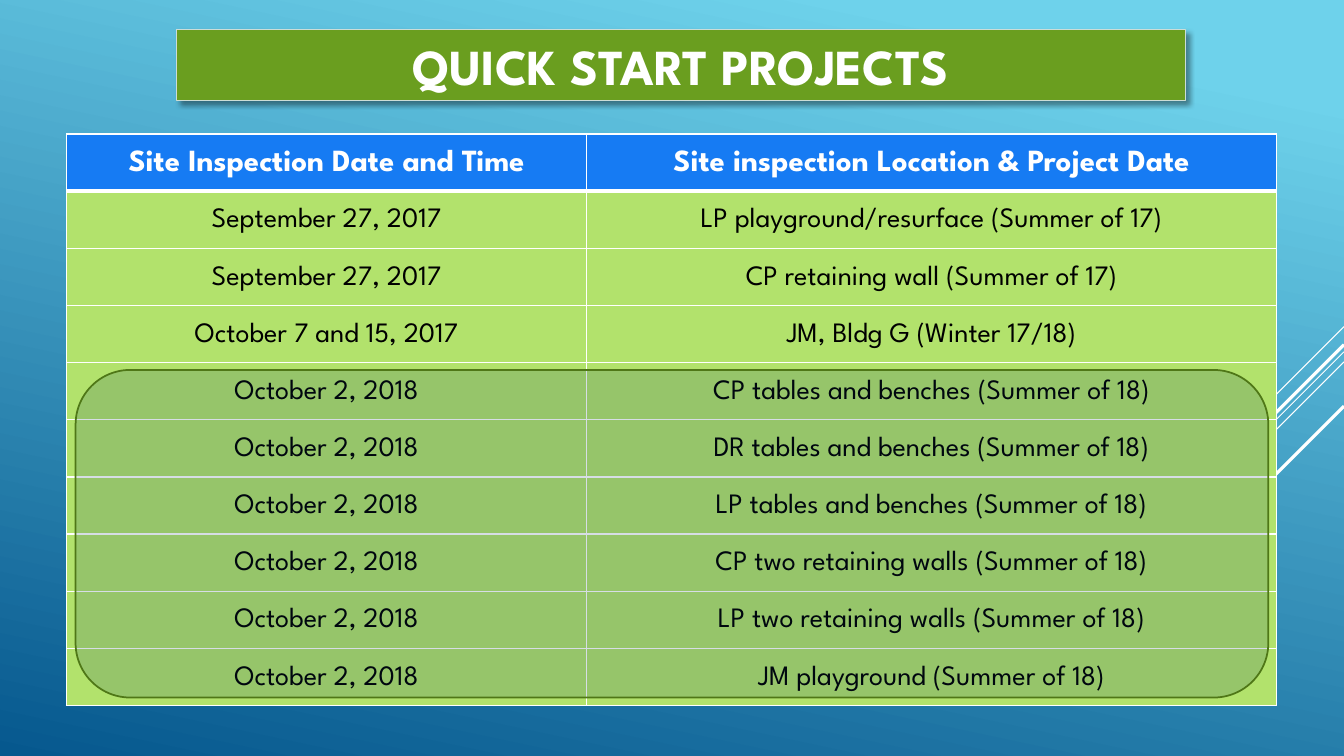
import pptx
import pptx.util
import pptx.oxml
import pptx.oxml.ns
import pptx.dml.color
import pptx.enum.shapes
import pptx.enum.text

Inches = pptx.util.Inches
Pt = pptx.util.Pt
RGBColor = pptx.dml.color.RGBColor
MIDDLE = pptx.enum.text.MSO_ANCHOR.MIDDLE

WHITE = RGBColor(0xFF, 0xFF, 0xFF)
BLACK = RGBColor(0, 0, 0)
SKY = RGBColor(0x6E, 0xD2, 0xEB)
DEEP = RGBColor(0x06, 0x58, 0x8E)
GREEN = RGBColor(0x6A, 0x9E, 0x1F)
PALE = RGBColor(0xCC, 0xDD, 0xD7)
BLUE = RGBColor(0x16, 0x7B, 0xF3)
LIME = RGBColor(0xB2, 0xE2, 0x6C)
NAVY = RGBColor(0x05, 0x2F, 0x61)
MOSS = RGBColor(0x4F, 0x77, 0x17)

FACE = "League Spartan"
EDGE = 13.33

# Start height at the right edge, run to the left, line width
RAYS = [(3.24, 1, 0.75), (3.49, 3.26, 0.75), (3.59, 2.08, 0.75),
        (3.42, 1.91, 2.25), (4.03, 1.39, 2.25)]

ROWS = [
    ("Site Inspection Date and Time", "Site inspection Location & Project Date"),
    ("September 27, 2017", "LP playground/resurface (Summer of 17)"),
    ("September 27, 2017", "CP retaining wall (Summer of 17)"),
    ("October 7 and 15, 2017", "JM, Bldg G (Winter 17/18)"),
    ("October 2, 2018", "CP tables and benches (Summer of 18)"),
    ("October 2, 2018", "DR tables and benches (Summer of 18)"),
    ("October 2, 2018", "LP tables and benches (Summer of 18)"),
    ("October 2, 2018", "CP two retaining walls (Summer of 18)"),
    ("October 2, 2018", "LP two retaining walls (Summer of 18)"),
    ("October 2, 2018", "JM playground (Summer of 18)"),
]


def apply(target, values):
    for name, value in values.items():
        setattr(target, name, value)


def place(shape, left, top, width, height):
    apply(shape, {"left": Inches(left), "top": Inches(top),
                  "width": Inches(width), "height": Inches(height)})


def paint(shape, fill, line, width):
    shape.fill.solid()
    shape.fill.fore_color.rgb = fill
    shape.line.color.rgb = line
    shape.line.width = Pt(width)


def write(frame, text, size, color, bold, **layout):
    para = frame.paragraphs[0]
    para.text = text
    apply(para, {"alignment": pptx.enum.text.PP_ALIGN.CENTER,
                 "space_before": Pt(0), **layout})
    apply(para.font, {"name": FACE, "size": Pt(size), "bold": bold})
    para.font.color.rgb = color


def add_xml(parent, text):
    space = pptx.oxml.ns.nsdecls("a")
    parent.append(pptx.oxml.parse_xml(text.replace(" ns", " " + space, 1)))


def fill_back(slide):
    fill = slide.background.fill
    fill.gradient()
    fill.gradient_angle = 258
    for stop, color, spot in zip(fill.gradient_stops, (SKY, DEEP), (0.1, 1)):
        stop.color.rgb = color
        stop.position = spot


def add_ray(slide, top, run, width):
    ray = slide.shapes.add_connector(
        pptx.enum.shapes.MSO_CONNECTOR.STRAIGHT,
        Inches(EDGE), Inches(top), Inches(EDGE - run), Inches(top + run))
    ray.line.color.rgb = WHITE
    ray.line.width = Pt(width)
    add_xml(ray._element.spPr, "<a:effectLst ns/>")


def add_title(slide, text):
    title = slide.shapes.title
    place(title, 1.75, 0.29, 10.01, 0.71)
    paint(title, GREEN, PALE, 0.75)
    add_xml(title._element.spPr,
            f'<a:effectLst ns><a:outerShdw blurRad="{Pt(4)}" dist="{Pt(3)}" '
            'dir="2700000" algn="tl" rotWithShape="0"><a:srgbClr val="000000">'
            '<a:alpha val="40000"/></a:srgbClr></a:outerShdw></a:effectLst>')
    apply(title.text_frame, {"auto_size": pptx.enum.text.MSO_AUTO_SIZE.NONE,
                             "word_wrap": True, "vertical_anchor": MIDDLE})
    write(title.text_frame, text, 36, WHITE, True)


def set_cell(cell, text, row):
    head = row == 0
    apply(cell, {"vertical_anchor": MIDDLE,
                 "margin_left": Inches(0.06), "margin_right": Inches(0.06),
                 "margin_top": Inches(0.01), "margin_bottom": 0})
    write(cell.text_frame, text, 22 if head else 20, WHITE if head else BLACK,
          head, line_spacing=1.07, space_after=Pt(8))
    # The rule below the header is thicker
    widths = {"L": 1, "R": 1, "T": 3 if row == 1 else 1, "B": 3 if head else 1}
    for side, width in widths.items():
        add_xml(cell._tc.get_or_add_tcPr(),
                f'<a:ln{side} ns w="{Pt(width)}"><a:solidFill>'
                f'<a:srgbClr val="{WHITE}"/></a:solidFill></a:ln{side}>')
    cell.fill.solid()
    cell.fill.fore_color.rgb = BLUE if head else LIME


def add_grid(slide, rows):
    table = slide.shapes.add_table(
        len(rows), 2, Inches(0.66), Inches(1.33), Inches(12), Inches(5.67)).table
    table.horz_banding = False
    for column, width in zip(table.columns, (5.16, 6.84)):
        column.width = Inches(width)
    for r, row in enumerate(rows):
        for c, text in enumerate(row):
            set_cell(table.cell(r, c), text, r)


def add_frame(slide):
    frame = slide.shapes.add_shape(
        pptx.enum.shapes.MSO_SHAPE.ROUNDED_RECTANGLE,
        Inches(0.75), Inches(3.67), Inches(11.83), Inches(3.25))
    frame.shadow.inherit = False
    paint(frame, NAVY, MOSS, 1.25)
    tint = frame._element.spPr.find(pptx.oxml.ns.qn("a:solidFill"))[0]
    add_xml(tint, '<a:alpha ns val="16000"/>')


def main():
    deck = pptx.Presentation()
    apply(deck, {"slide_width": Inches(EDGE), "slide_height": Inches(7.5)})
    slide = deck.slides.add_slide(deck.slide_layouts[5])

    # Backdrop with slanted rays
    fill_back(slide)
    for ray in RAYS:
        add_ray(slide, *ray)

    # Heading, schedule and highlight of the 2018 projects
    add_title(slide, "QUICK START PROJECTS")
    add_grid(slide, ROWS)
    add_frame(slide)
    deck.save("out.pptx")


if __name__ == "__main__":
    main()
